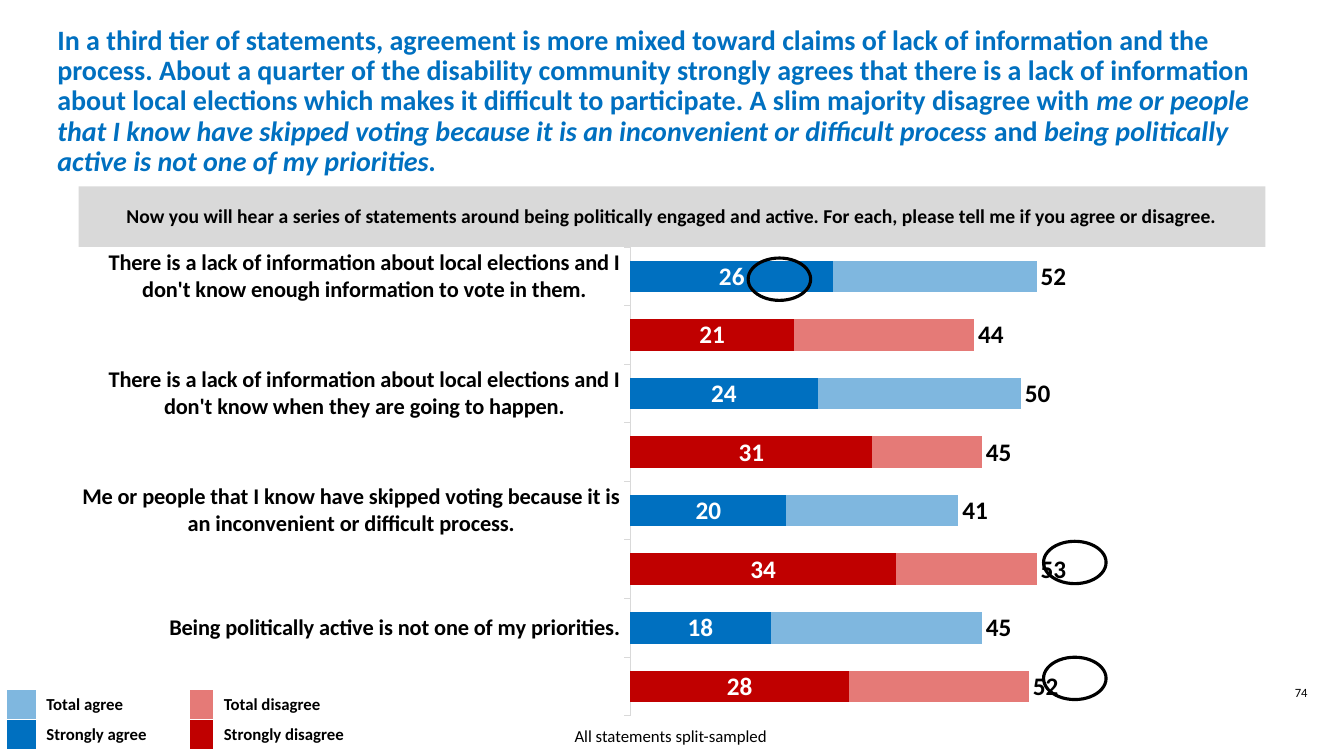
from dataclasses import dataclass

from lxml.etree import SubElement
from pptx import Presentation
from pptx.chart.data import CategoryChartData
from pptx.dml.color import RGBColor
from pptx.enum.chart import XL_CHART_TYPE as ChartType
from pptx.enum.chart import XL_LABEL_POSITION as LabelPosition
from pptx.enum.chart import XL_TICK_LABEL_POSITION as TickLabels
from pptx.enum.chart import XL_TICK_MARK as TickMark
from pptx.enum.shapes import MSO_SHAPE as Preset
from pptx.enum.text import MSO_ANCHOR as Anchor
from pptx.enum.text import PP_ALIGN as Align
from pptx.oxml import parse_xml
from pptx.oxml.ns import nsdecls, qn
from pptx.util import Inches, Pt


@dataclass(frozen=True)
class Theme:
    """Colours, font and type sizes of the slide."""
    font: str = "Calibri"
    black: str = "000000"
    white: str = "FFFFFF"
    grey: str = "D9D9D9"
    strong_agree: str = "0070C0"
    total_agree: str = "7FB7DF"
    strong_disagree: str = "C00000"
    total_disagree: str = "E57A77"
    title: int = 20
    value: int = 18
    category: int = 16
    banner: int = 14
    note: int = 12
    number: int = 9


THEME = Theme()
TITLE = [
    ("In a third tier of statements, agreement is more mixed toward claims of lack of information "
     "and the process. About a quarter of the disability community strongly agrees that there is a "
     "lack of information about local elections which makes it difficult to participate. A slim "
     "majority disagree with ", False),
    ("me or people that I know have skipped voting because it is an inconvenient or difficult "
     "process ", True),
    ("and ", False),
    ("being politically active is not one of my priorities.", True),
]
BANNER = ("Now you will hear a series of statements around being politically engaged and active. "
          "For each, please tell me if you agree or disagree.")
STATEMENTS = [
    "Being politically active is not one of my priorities.",
    "Me or people that I know have skipped voting because it is an inconvenient or difficult "
    "process.",
    "There is a lack of information about local elections and I don't know when they are going to "
    "happen.",
    "There is a lack of information about local elections and I don't know enough information to "
    "vote in them.",
]
STRONG = [28, 18, 34, 20, 31, 24, 21, 26]
SOMEWHAT = [23, 27, 18, 22, 14, 26, 23, 26]
TOTAL = [52, 45, 53, 41, 45, 50, 44, 52]


def set_font(font, size, color=THEME.black, bold=False, italic=False):
    """Apply the theme font with the given format."""
    values = {"name": THEME.font, "size": Pt(size), "bold": bold, "italic": italic}
    for name, value in values.items():
        setattr(font, name, value)
    font.color.rgb = RGBColor.from_string(color)


def set_fill(fill, color):
    """Fill with one solid colour."""
    fill.solid()
    fill.fore_color.rgb = RGBColor.from_string(color)


def write(frame, spans, size, bold=False, align=None, spacing=None, anchor=Anchor.TOP):
    """Write one paragraph of (text, italic) spans into a text frame."""
    frame.word_wrap = True
    frame.vertical_anchor = anchor
    para = frame.paragraphs[0]
    for name, value in {"alignment": align, "line_spacing": spacing}.items():
        setattr(para, name, value)
    for text, italic in spans:
        span = para.add_run()
        span.text = text
        set_font(span.font, size, frame_color(size), bold, italic)


def frame_color(size):
    """Give the text colour that belongs to a type size."""
    return THEME.strong_agree if size == THEME.title else THEME.black


def add_text(page, box, spans, size, **style):
    """Place a text box."""
    frame = page.shapes.add_textbox(*map(Inches, box)).text_frame
    write(frame, spans, size, **style)


def add_banner(page, box):
    """Place the grey question banner."""
    banner = page.shapes.add_shape(Preset.RECTANGLE, *map(Inches, box))
    banner.shadow.inherit = False
    set_fill(banner.fill, THEME.grey)
    banner.line.fill.background()
    write(banner.text_frame, [(BANNER, False)], THEME.banner, bold=True,
          align=Align.CENTER, spacing=0.9, anchor=Anchor.MIDDLE)


def add_highlight(page, box):
    """Ring a value with an open ellipse."""
    ring = page.shapes.add_shape(Preset.OVAL, *map(Inches, box))
    ring.shadow.inherit = False
    ring.fill.background()
    ring.line.color.rgb = RGBColor.from_string(THEME.black)
    ring.line.width = Pt(2.25)


def add_legend(page, box, swatch, entries):
    """Place a two-column legend table of (label, colour) entries."""
    left, top, width, height = box
    frame = page.shapes.add_table(len(entries), 2, *map(Inches, box))
    table = frame.table
    for flag in ("first_row", "horz_banding"):
        setattr(table, flag, False)
    for column, size in zip(table.columns, (swatch, width - swatch)):
        column.width = Inches(size)
    for row, (label, color) in enumerate(entries):
        key, name = table.cell(row, 0), table.cell(row, 1)
        for side in ("left", "right", "top", "bottom"):
            setattr(key, f"margin_{side}", 0)
        set_fill(key.fill, color)
        name.fill.background()
        write(name.text_frame, [(label, False)], THEME.note, bold=True)
        for cell in (key, name):
            add_borders(cell)


def add_borders(cell):
    """Draw thin white borders round a cell."""
    props = cell._tc.get_or_add_tcPr()
    for index, side in enumerate(("lnL", "lnR", "lnT", "lnB")):
        props.insert(index, parse_xml(
            f'<a:{side} {nsdecls("a")} w="12700"><a:solidFill><a:srgbClr val="{THEME.white}"/>'
            f'</a:solidFill></a:{side}>'))


def set_plot_layout(chart, x, y, w, h):
    """Fix the inner plot area as fractions of the chart."""
    area = chart._chartSpace.chart.plotArea
    for old in area.findall(qn("c:layout")):
        area.remove(old)
    layout = parse_xml(f'<c:layout {nsdecls("c")}><c:manualLayout/></c:layout>')
    values = {"layoutTarget": "inner", "xMode": "edge", "yMode": "edge",
              "x": x, "y": y, "w": w, "h": h}
    for name, value in values.items():
        SubElement(layout[0], qn(f"c:{name}")).set("val", str(value))
    area.insert(0, layout)


def add_labels(series, color, position):
    """Show the values of a series."""
    labels = series.data_labels
    for name, value in {"show_value": True, "position": position}.items():
        setattr(labels, name, value)
    set_font(labels.font, THEME.value, color, bold=True)


def add_agreement_chart(page, box):
    """Place the stacked bars of agreement and disagreement."""
    data = CategoryChartData()
    data.categories = [label for text in STATEMENTS for label in ("", text)]
    for number, values in enumerate((STRONG, SOMEWHAT, TOTAL), 1):
        data.add_series(f"Series {number}", values)
    chart = page.shapes.add_chart(ChartType.BAR_STACKED, *map(Inches, box), data).chart
    chart.has_legend = chart.has_title = False
    set_font(chart.font, 10)
    set_plot_layout(chart, 0.444, 0.029, 0.535, 0.953)
    plot = chart.plots[0]
    for name, value in {"gap_width": 86, "overlap": 100, "vary_by_categories": False}.items():
        setattr(plot, name, value)
    scale = {"minimum_scale": 0, "maximum_scale": 85, "visible": False,
             "has_major_gridlines": False}
    for name, value in scale.items():
        setattr(chart.value_axis, name, value)
    axis = chart.category_axis
    axis.major_tick_mark = TickMark.OUTSIDE
    axis.tick_label_position = TickLabels.LOW
    axis.format.line.color.rgb = RGBColor.from_string(THEME.grey)
    axis.format.line.width = Pt(0.75)
    set_font(axis.tick_labels.font, THEME.category, bold=True)
    strong, somewhat, total = plot.series
    for series, agree, disagree in ((strong, THEME.strong_agree, THEME.strong_disagree),
                                    (somewhat, THEME.total_agree, THEME.total_disagree)):
        set_fill(series.format.fill, agree)
        for index in range(0, len(STRONG), 2):
            set_fill(series.points[index].format.fill, disagree)
    total.format.fill.background()
    add_labels(strong, THEME.white, LabelPosition.CENTER)
    add_labels(total, THEME.black, LabelPosition.INSIDE_BASE)


def main():
    """Build and save the slide."""
    deck = Presentation()
    deck.slide_width, deck.slide_height = Inches(13.33), Inches(7.5)
    page = deck.slides.add_slide(deck.slide_layouts[6])
    add_text(page, (12.53, 6.75, 0.75, 0.33), [("74", False)], THEME.number, align=Align.CENTER)
    add_agreement_chart(page, (0.78, 2.31, 12.32, 4.88))
    add_legend(page, (0.06, 6.84, 2.36, 0.6), 0.3, [("Total agree", THEME.total_agree),
                                                    ("Strongly agree", THEME.strong_agree)])
    add_text(page, (5.6, 7.15, 2.13, 0.3), [("All statements split-sampled", False)], THEME.note)
    add_legend(page, (1.88, 6.84, 2.3, 0.6), 0.24, [("Total disagree", THEME.total_disagree),
                                                    ("Strongly disagree", THEME.strong_disagree)])
    for left, top in ((10.35, 6.52), (10.35, 5.37), (7.42, 2.56)):
        add_highlight(page, (left, top, 0.62, 0.42))
    add_banner(page, (0.78, 1.85, 11.77, 0.6))
    add_text(page, (0.47, 0.29, 12.49, 1.44), TITLE, THEME.title, bold=True, spacing=0.9,
             anchor=Anchor.MIDDLE)
    deck.save("out.pptx")


if __name__ == "__main__":
    main()
